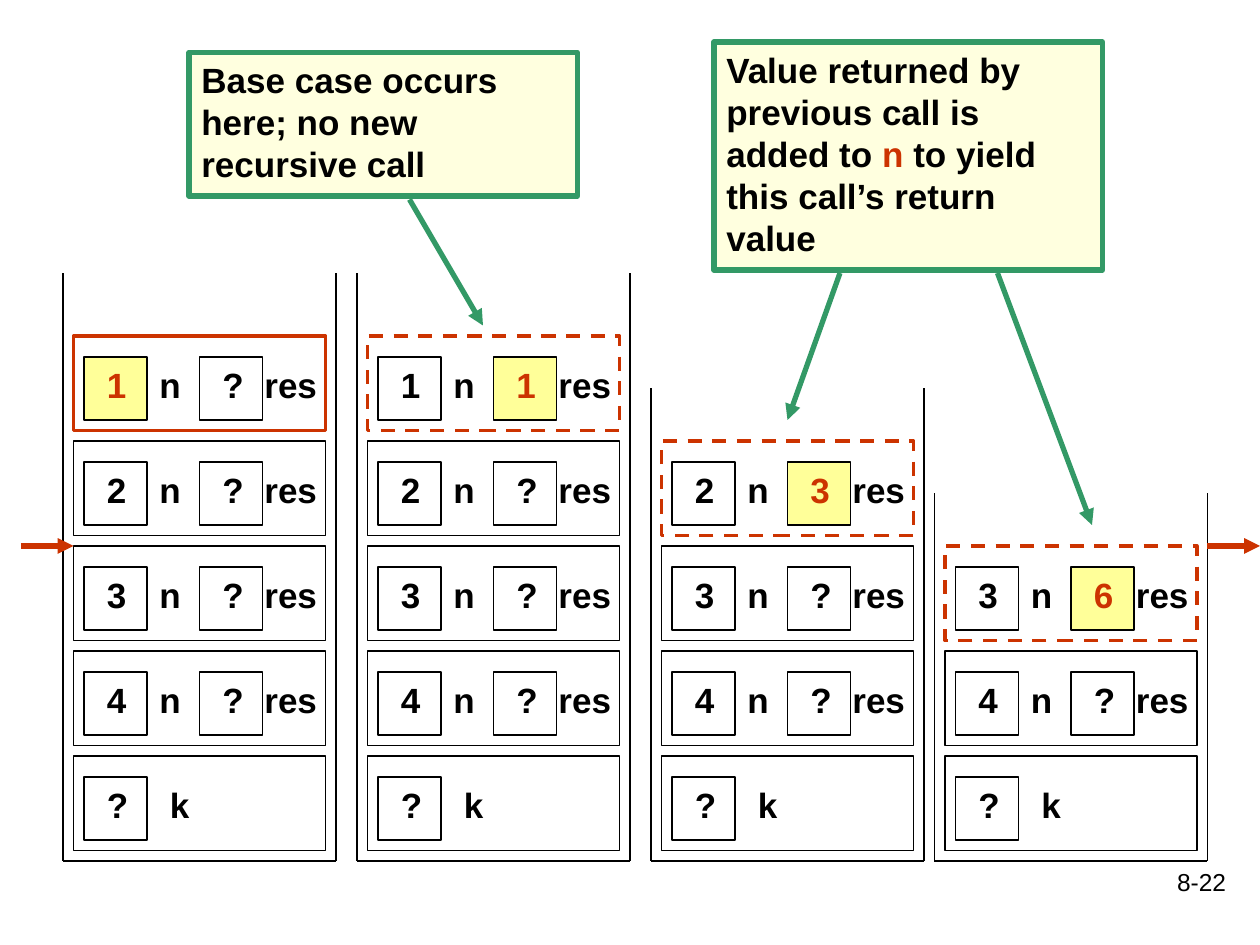
from lxml.etree import SubElement
from pptx import Presentation
from pptx.dml.color import RGBColor
from pptx.enum.dml import MSO_LINE_DASH_STYLE as Dash
from pptx.enum.shapes import MSO_CONNECTOR, MSO_SHAPE
from pptx.enum.text import MSO_ANCHOR, PP_ALIGN
from pptx.oxml.ns import qn
from pptx.util import Inches, Pt

COLORS = {
    "ink": "000000",
    "active": "CC3300",
    "highlight": "FFFF99",
    "note": "FFFFDF",
    "accent": "339966",
}
FRAME_FORMATS = {
    "waiting": {"color": "ink", "weight": 0.75},
    "calling": {"color": "active", "weight": 2},
    "returning": {"color": "active", "weight": 2, "dash": Dash.DASH},
}
STACKS = [
    {"left": 6, "top": 26, "calls": [4, 3, 2, 1], "state": "calling", "result": "?"},
    {"left": 34, "top": 26, "calls": [4, 3, 2, 1], "state": "returning", "result": "1"},
    {"left": 62, "top": 37, "calls": [4, 3, 2], "state": "returning", "result": "3"},
    {"left": 89, "top": 47, "calls": [4, 3], "state": "returning", "result": "6"},
]
NOTES = [
    (68, 4, 1.81, [("Value returned by previous call is added to ", "ink"),
                   ("n", "active"),
                   (" to yield this call’s return value", "ink")]),
    (18, 5, 1.14, [("Base case occurs here; no new recursive call", "ink")]),
]
ARROWS = [
    ((2, 52), (7, 52), "active"),
    ((115, 52), (120, 52), "active"),
    ((39, 19), (46, 31), "accent"),
    ((80, 26), (75, 40), "accent"),
    ((95, 26), (104, 50), "accent"),
]
STACK_WIDTH = 26
FLOOR = 82
FRAME_PITCH = 10


def twelfths(count):
    return Inches(count / 12)


def rgb(name):
    return RGBColor.from_string(COLORS[name])


def format_line(line, color="ink", weight=0.75, dash=None):
    line.color.rgb = rgb(color)
    for attribute, value in {"width": Pt(weight), "dash_style": dash}.items():
        setattr(line, attribute, value)


def write(text_frame, runs, size=20, bold=True, align=PP_ALIGN.LEFT):
    frame_format = {"word_wrap": True, "vertical_anchor": MSO_ANCHOR.TOP}
    for attribute, value in frame_format.items():
        setattr(text_frame, attribute, value)
    paragraph = text_frame.paragraphs[0]
    paragraph.alignment = align
    for text, color in runs:
        run = paragraph.add_run()
        run.text = text
        run.font.color.rgb = rgb(color)
        font_format = {"name": "Arial", "size": Pt(size), "bold": bold}
        for attribute, value in font_format.items():
            setattr(run.font, attribute, value)


def add_box(slide, left, top, width, height, fill=None, **line_format):
    box = slide.shapes.add_shape(
        MSO_SHAPE.RECTANGLE, twelfths(left), twelfths(top), twelfths(width), height)
    box.shadow.inherit = False
    if fill:
        box.fill.solid()
        box.fill.fore_color.rgb = rgb(fill)
    else:
        box.fill.background()
    format_line(box.line, **line_format)
    return box


def add_label(slide, left, top, text, color="ink", width=4):
    label = slide.shapes.add_textbox(
        twelfths(left), twelfths(top), twelfths(width), Inches(0.43))
    write(label.text_frame, [(text, color)])


def add_line(slide, start, end, arrow=False, **line_format):
    ends = [twelfths(value) for value in (*start, *end)]
    connector = slide.shapes.add_connector(MSO_CONNECTOR.STRAIGHT, *ends)
    format_line(connector.line, **line_format)
    properties = connector._element.spPr
    if arrow:
        SubElement(properties.find(qn("a:ln")), qn("a:tailEnd"), type="triangle")
    SubElement(properties, qn("a:effectLst"))


def add_variable(slide, left, top, value, highlighted=False):
    add_box(slide, left, top, 6, Inches(0.5), "highlight" if highlighted else None)
    add_label(slide, left + 1, top, value, "active" if highlighted else "ink")


def add_call(slide, left, top, argument, result="?", state="waiting"):
    add_variable(slide, left + 2, top + 2, argument, state == "calling")
    add_label(slide, left + 8, top + 2, "n")
    add_variable(slide, left + 13, top + 2, result, state == "returning")
    add_label(slide, left + 18, top + 2, "res", width=8)
    add_box(slide, left + 1, top, 24, Inches(0.75), **FRAME_FORMATS[state])


def add_caller(slide, left, top):
    add_variable(slide, left + 2, top + 2, "?")
    add_label(slide, left + 9, top + 2, "k")
    add_box(slide, left + 1, top, 24, Inches(0.75))


def add_stack(slide, left, top, calls, state, result):
    caller_top = FLOOR - FRAME_PITCH
    add_caller(slide, left, caller_top)
    for depth, argument in enumerate(calls, start=1):
        current = {"result": result, "state": state} if depth == len(calls) else {}
        add_call(slide, left, caller_top - depth * FRAME_PITCH, str(argument), **current)
    right = left + STACK_WIDTH
    add_line(slide, (left, FLOOR), (right, FLOOR))
    for wall in (left, right):
        add_line(slide, (wall, FLOOR), (wall, top))


def add_note(slide, left, top, height, runs):
    note = add_box(slide, left, top, 37, Inches(height), "note", color="accent", weight=3)
    write(note.text_frame, runs)


def add_page_number(slide, number):
    page = slide.shapes.add_textbox(Inches(7.75), Inches(6.83), Inches(2.08), Inches(0.5))
    write(page.text_frame, [(number, "ink")], size=14, bold=False, align=PP_ALIGN.RIGHT)


def main():
    deck = Presentation()
    deck.slide_width, deck.slide_height = Inches(10), Inches(7.5)
    slide = deck.slides.add_slide(deck.slide_layouts[6])
    add_page_number(slide, "8-22")
    for stack in STACKS:
        add_stack(slide, **stack)
    for note in NOTES:
        add_note(slide, *note)
    for start, end, color in ARROWS:
        add_line(slide, start, end, arrow=True, color=color, weight=3)
    deck.save("out.pptx")


if __name__ == "__main__":
    main()
